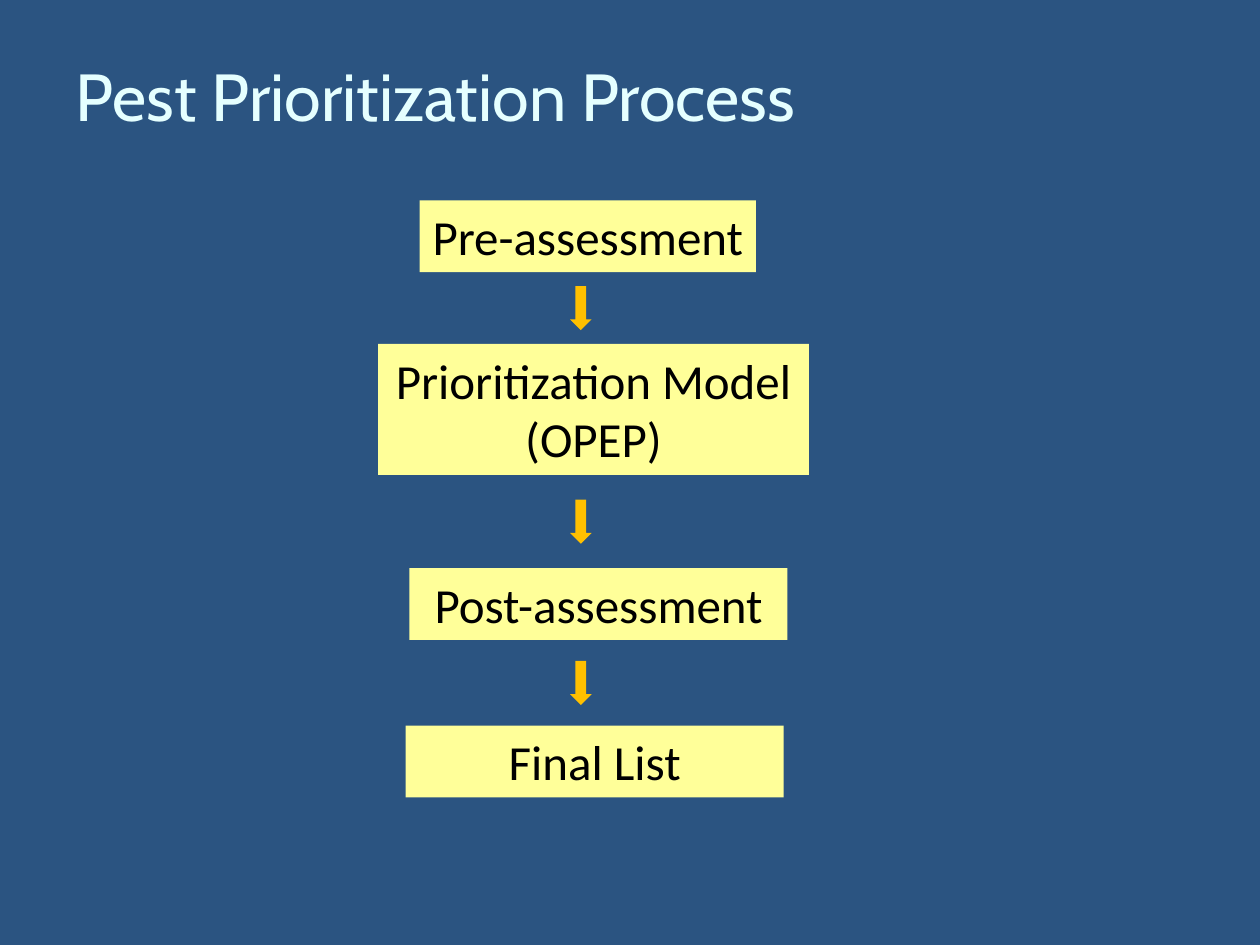
from dataclasses import dataclass

from pptx import Presentation
from pptx.dml.color import RGBColor
from pptx.enum.shapes import MSO_SHAPE as Shape
from pptx.enum.text import MSO_ANCHOR as Anchor, PP_ALIGN as Align
from pptx.util import Inches, Pt

TITLE = "Pest Prioritization Process"

# Step text, left, top, width, number of text lines
STEPS = [
    ("Pre-assessment", 3.33, 1.59, 2.67, 1),
    ("Prioritization Model (OPEP)", 3, 2.73, 3.42, 2),
    ("Post-assessment", 3.25, 4.51, 3, 1),
    ("Final List", 3.22, 5.76, 3, 1),
]
LINE_HEIGHT, BOX_PADDING = 0.47, 0.1
ARROW_CENTER, ARROW_WIDTH, ARROW_HEIGHT = 4.61, 0.17, 0.35


@dataclass(frozen=True)
class Theme:
    background: str = "2B5481"
    title: str = "E5FFFF"
    box: str = "FFFF99"
    text: str = "000000"
    arrow: str = "FFC000"
    title_font: str = "Cabin"
    body_font: str = "Calibri"
    title_size: int = 38
    body_size: int = 28


THEME = Theme()


def set_font(paragraph, name, size, color):
    font = paragraph.runs[0].font
    font.name, font.size = name, Pt(size)
    font.color.rgb = RGBColor.from_string(color)


def add_block(slide, kind, left, top, width, height, color):
    block = slide.shapes.add_shape(kind, *map(Inches, (left, top, width, height)))
    block.shadow.inherit = False
    block.fill.solid()
    block.fill.fore_color.rgb = RGBColor.from_string(color)
    block.line.fill.background()
    return block


def add_title(slide):
    title = slide.shapes.title
    title.left, title.top, title.width, title.height = map(Inches, (0.5, 0.25, 9, 1))
    frame = title.text_frame
    frame.text = TITLE
    frame.vertical_anchor = Anchor.MIDDLE
    frame.paragraphs[0].alignment = Align.LEFT
    set_font(frame.paragraphs[0], THEME.title_font, THEME.title_size, THEME.title)


def add_step(slide, text, left, top, width, height):
    box = add_block(slide, Shape.RECTANGLE, left, top, width, height, THEME.box)
    frame = box.text_frame
    frame.word_wrap = True
    frame.vertical_anchor = Anchor.TOP
    frame.text = text
    frame.paragraphs[0].alignment = Align.CENTER
    set_font(frame.paragraphs[0], THEME.body_font, THEME.body_size, THEME.text)


def add_flow(slide):
    """Stack the steps, with an arrow centred in each gap between them."""
    previous_bottom = None
    for text, left, top, width, lines in STEPS:
        height = lines * LINE_HEIGHT + BOX_PADDING
        add_step(slide, text, left, top, width, height)
        if previous_bottom is not None:
            arrow_top = (previous_bottom + top - ARROW_HEIGHT) / 2
            add_block(slide, Shape.DOWN_ARROW, ARROW_CENTER - ARROW_WIDTH / 2,
                      arrow_top, ARROW_WIDTH, ARROW_HEIGHT, THEME.arrow)
        previous_bottom = top + height


def main():
    deck = Presentation()
    deck.slide_width, deck.slide_height = Inches(10), Inches(7.5)
    slide = deck.slides.add_slide(deck.slide_layouts.get_by_name("Title Only"))
    slide.background.fill.solid()
    slide.background.fill.fore_color.rgb = RGBColor.from_string(THEME.background)
    add_title(slide)
    add_flow(slide)
    deck.save("out.pptx")


if __name__ == "__main__":
    main()
